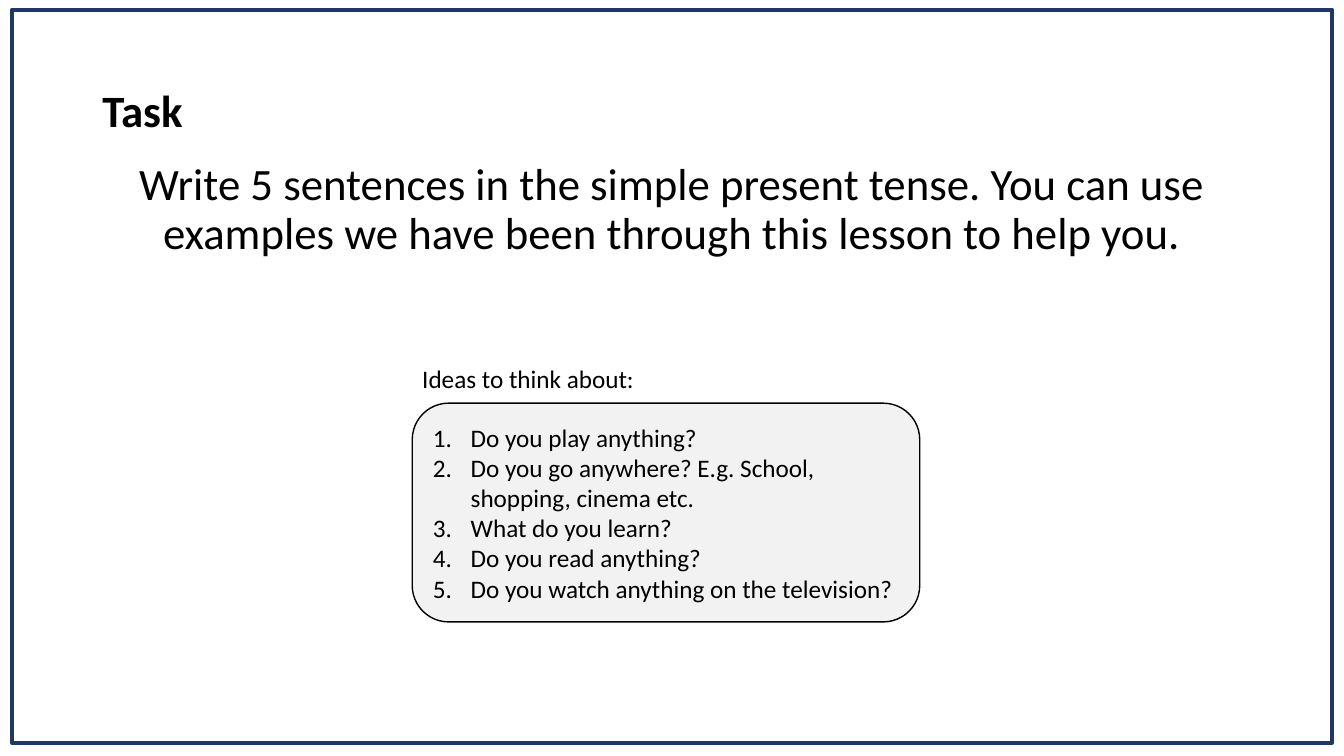
from pptx import Presentation
from pptx.dml.color import RGBColor as Rgb
from pptx.enum.shapes import MSO_SHAPE as Kind
from pptx.enum.text import MSO_ANCHOR as Anchor, PP_ALIGN as Align
from pptx.oxml.xmlchemy import OxmlElement as Node
from pptx.util import Pt

COLORS = {"text": "000000", "frame": "203864", "panel": "F2F2F2"}
IDEAS = [
    "Do you play anything?",
    "Do you go anywhere? E.g. School, shopping, cinema etc.",
    "What do you learn?",
    "Do you read anything?",
    "Do you watch anything on the television?",
]


class Page:
    font = "Calibri"

    def __init__(self, slide):
        self.slide = slide

    def color(self, name):
        return Rgb.from_string(COLORS[name])

    def label(self, shape, lines, size, bold=False, align=Align.LEFT,
              space=1.0, anchor=Anchor.MIDDLE, wrap=True):
        frame = shape.text_frame
        frame.word_wrap = wrap
        frame.vertical_anchor = anchor
        frame.text = "\n".join(lines)
        for para in frame.paragraphs:
            para.alignment = align
            para.line_spacing = space
            font = para.font
            font.name, font.size, font.bold = self.font, Pt(size), bold
            font.color.rgb = self.color("text")

    def text(self, box, line, size, **style):
        shape = self.slide.shapes.add_textbox(*map(Pt, box))
        self.label(shape, [line], size, **style)

    def shape(self, kind, box, line, width, fill=None):
        shape = self.slide.shapes.add_shape(kind, *map(Pt, box))
        shape.shadow.inherit = False
        shape.line.color.rgb = self.color(line)
        shape.line.width = Pt(width)
        if fill:
            shape.fill.solid()
            shape.fill.fore_color.rgb = self.color(fill)
        else:
            shape.fill.background()
        return shape

    def steps(self, shape, lines, size, indent):
        self.label(shape, lines, size)
        for para in shape.text_frame.paragraphs:
            props = para._p.get_or_add_pPr()
            props.set("marL", str(Pt(indent)))
            props.set("indent", str(-Pt(indent)))
            mark = Node("a:buAutoNum")
            mark.set("type", "arabicPeriod")
            props.insert_element_before(mark, "a:tabLst", "a:defRPr", "a:extLst")


def main():
    deck = Presentation()
    deck.slide_width, deck.slide_height = Pt(960), Pt(540)
    page = Page(deck.slides.add_slide(deck.slide_layouts[6]))

    # Heading and frame
    page.text((66, 28.75, 828, 104.4), "Task", 32, bold=True, space=0.9)
    page.shape(Kind.RECTANGLE, (8.5, 7, 943, 523.5), "frame", 3)

    # Task
    page.text((66, 98, 828, 104.4),
              "Write 5 sentences in the simple present tense. You can use "
              "examples we have been through this lesson to help you.",
              32, align=Align.CENTER, space=0.9)

    # Ideas
    page.text((294.5, 255.6, 168, 29), "Ideas to think about:", 18,
              anchor=Anchor.TOP, wrap=False)
    panel = page.shape(Kind.ROUNDED_RECTANGLE, (294.5, 288, 362.5, 156.25),
                       "text", 1, "panel")
    page.steps(panel, IDEAS, 18, 27)

    deck.save("out.pptx")


if __name__ == "__main__":
    main()
